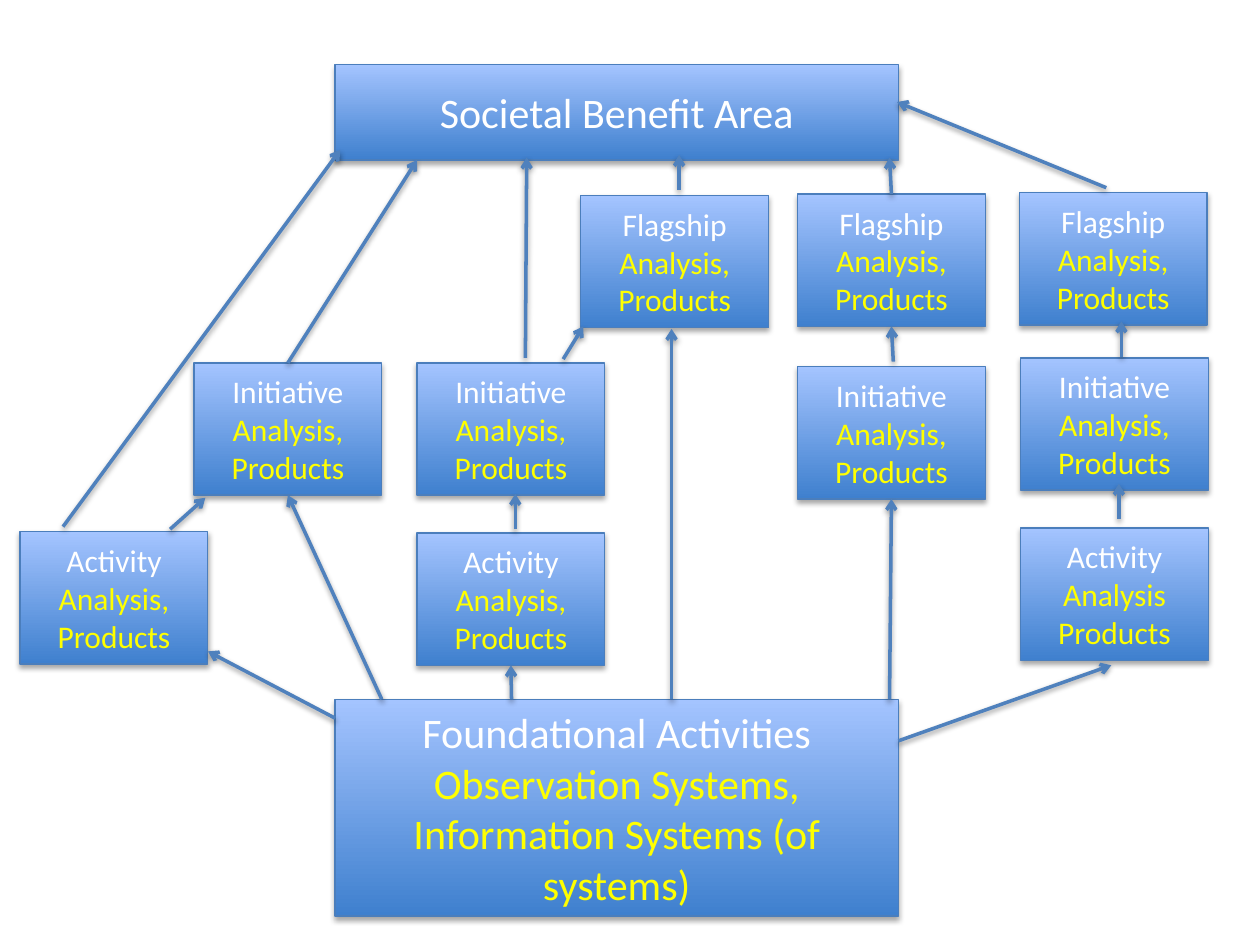
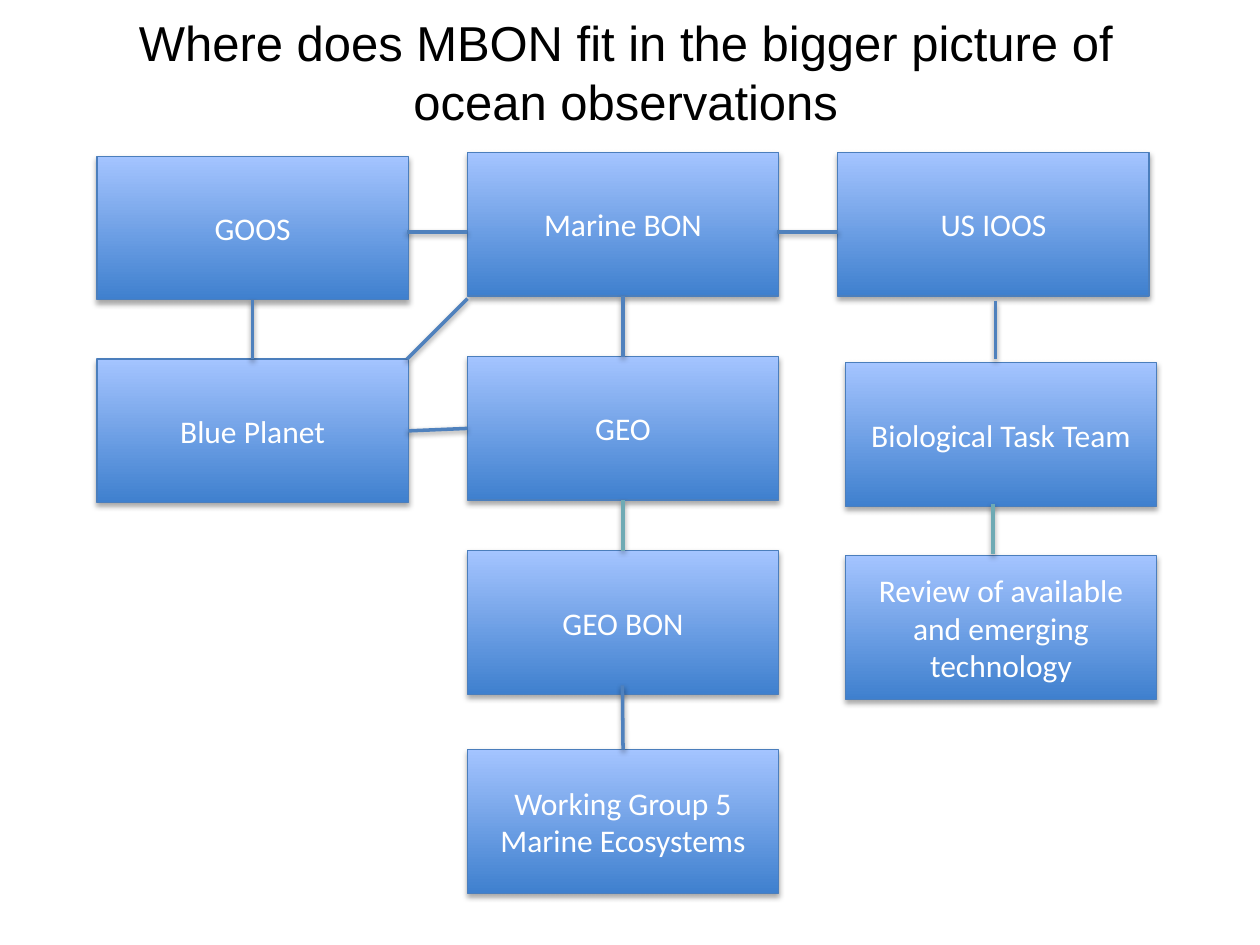
from lxml import etree
from pptx import Presentation
from pptx.dml.color import RGBColor
from pptx.enum import shapes, text
from pptx.oxml import ns
from pptx.util import Pt

PX = 9144  # 100 px to the inch
WHITE, YELLOW, BLACK = "FFFFFF", "FFFF00", "000000"
LOW, HIGH, EDGE = "3F80CE", "A4C4FF", "4B7EBC"
BLUE, TEAL = "4F81BD", "6EAAB4"


def emu(*px):
    return [int(n * PX) for n in px]


def rgb(code):
    return RGBColor.from_string(code)


def sub(node, tag, **attrs):
    return etree.SubElement(node, ns.qn(tag), attrs)


def shade(effects, dist, alpha):
    """Drop a soft shadow straight down."""
    drop = sub(effects, "a:outerShdw", blurRad="40000", dist=str(dist),
               dir="5400000", rotWithShape="0")
    tone = sub(drop, "a:srgbClr", val=BLACK)
    sub(tone, "a:alpha", val=str(alpha * 1000))


def write(frame, lines, hues, size, face):
    """Write centred lines; the last hue carries on to the end."""
    frame.word_wrap = True
    for i, line in enumerate(lines):
        para = frame.paragraphs[0] if i == 0 else frame.add_paragraph()
        para.alignment = text.PP_ALIGN.CENTER
        run = para.add_run()
        run.text = line
        for key, val in {"size": Pt(size), "name": face}.items():
            setattr(run.font, key, val)
        run.font.color.rgb = rgb(hues[min(i, len(hues) - 1)])


def box(slide, place, lines, size=18):
    rect = slide.shapes.add_shape(shapes.MSO_SHAPE.RECTANGLE, *emu(*place))
    rect.fill.gradient()
    rect.fill.gradient_angle = 90
    for stop, hue in zip(rect.fill.gradient_stops, (LOW, HIGH)):
        stop.color.rgb = rgb(hue)
    rect.line.color.rgb = rgb(EDGE)
    rect.line.width = Pt(0.75)
    rect.shadow.inherit = False
    shade(rect._element.spPr.find(ns.qn("a:effectLst")), 23000, 35)
    rect.text_frame.vertical_anchor = text.MSO_ANCHOR.MIDDLE
    write(rect.text_frame, lines, (WHITE, YELLOW), size, "Calibri")
    return rect


def dock(boxes, x, y):
    """Find the box and side whose middle lies within 2 px of a point."""
    for rect in boxes:
        left, top, wide, high = (n / PX for n in (
            rect.left, rect.top, rect.width, rect.height))
        mids = ((left + wide / 2, top), (left, top + high / 2),
                (left + wide / 2, top + high), (left + wide, top + high / 2))
        for side, (mx, my) in enumerate(mids):
            if max(abs(mx - x), abs(my - y)) <= 2.01:
                return rect, side
    return None


def link(slide, boxes, ends, hue=BLUE, arrow=False):
    line = slide.shapes.add_connector(shapes.MSO_CONNECTOR.STRAIGHT, *emu(*ends))
    line.line.color.rgb = rgb(hue)
    line.line.width = Pt(2)
    if arrow:
        sub(line.line._get_or_add_ln(), "a:tailEnd", type="arrow")
    shade(sub(line._element.spPr, "a:effectLst"), 20000, 38)
    for join, point in ((line.begin_connect, ends[:2]), (line.end_connect, ends[2:])):
        spot = dock(boxes, *point)
        if spot:
            join(*spot)


def title(slide, place, line):
    area = slide.shapes.add_textbox(*emu(*place))
    write(area.text_frame, [line], [BLACK], 28, "Arial")


def levels(slide):
    """Foundations feed activities, initiatives, flagships and the benefit area."""
    boxes = [
        box(slide, (266, 555, 447, 172), (
            "Foundational Activities", "Observation Systems,",
            "Information Systems (of systems)"), 24),
        box(slide, (266, 51, 447, 76), ["Societal Benefit Area"], 24),
    ]
    steps = {
        "Activity": ((16, 422), (331, 423), (810, 419)),
        "Initiative": ((154, 288), (331, 288), (633, 291), (810, 284)),
        "Flagship": ((461, 155), (633, 154), (809, 153)),
    }
    for name, spots in steps.items():
        for x, y in spots:
            plain = (name, x) == ("Activity", 810)
            work = "Analysis Products" if plain else "Analysis, Products"
            boxes.append(box(slide, (x, y, 149, 105), (name, work)))
    rises = [(406, 555), (888, 412), (890, 283), (409, 420),
             (539, 151), (709, 287), (706, 153)]
    arrows = [(x, y, x, y - 28) for x, y in rises] + [
        (266, 570, 165, 517), (713, 588, 882, 528), (50, 418, 270, 119),
        (878, 149, 712, 81), (706, 555, 707, 396), (417, 284, 418, 125),
        (533, 555, 533, 261), (303, 555, 229, 393), (229, 288, 331, 127),
        (447, 285, 463, 259), (135, 420, 163, 395),
    ]
    for ends in arrows:
        link(slide, boxes, ends, arrow=True)


def network(slide):
    """Links between the ocean observing groups."""
    title(slide, (49, 5, 895, 104),
          "Where does MBON fit in the bigger picture of ocean observations")
    groups = {
        "GOOS": (77, 124), "Blue Planet": (77, 285),
        "Marine BON": (371, 121), "GEO": (371, 283), "GEO BON": (371, 437),
        "Working Group 5 Marine Ecosystems": (371, 595),
        "US IOOS": (665, 121), "Biological Task Team": (671, 288),
        "Review of available and emerging technology": (671, 441),
    }
    boxes = [box(slide, (*spot, 247, 114), [name]) for name, spot in groups.items()]
    ties = [
        (494, 237, 494, 283), (494, 544, 494, 594), (371, 184, 323, 184),
        (371, 342, 323, 342), (200, 285, 200, 239), (371, 237, 323, 285),
        (665, 184, 617, 184), (790, 239, 790, 285),
    ]
    for ends in ties:
        link(slide, boxes, ends)
    for ends in ((494, 398, 494, 437), (788, 400, 788, 440)):
        link(slide, boxes, ends, TEAL)


def main():
    deck = Presentation()
    deck.slide_width, deck.slide_height = emu(1000, 750)
    for draw in (levels, network):
        draw(deck.slides.add_slide(deck.slide_layouts[6]))
    deck.save("out.pptx")


if __name__ == "__main__":
    main()
